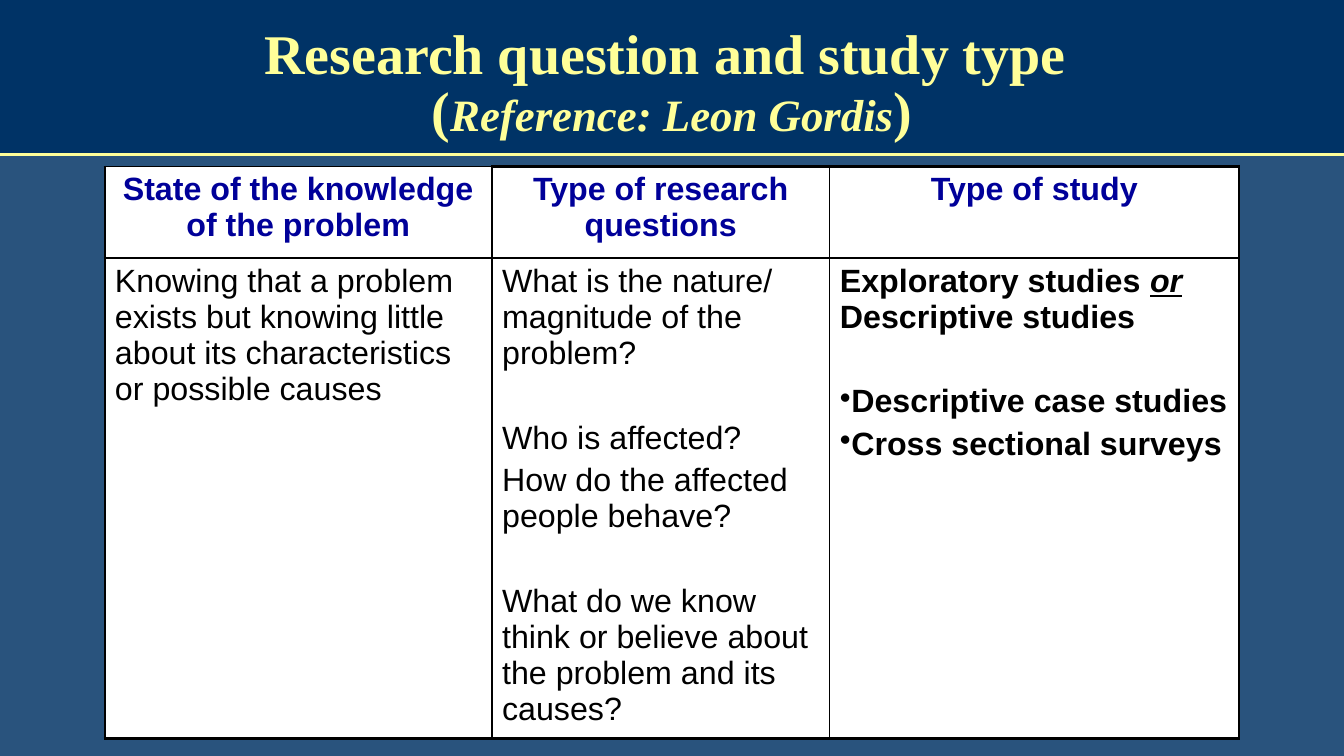
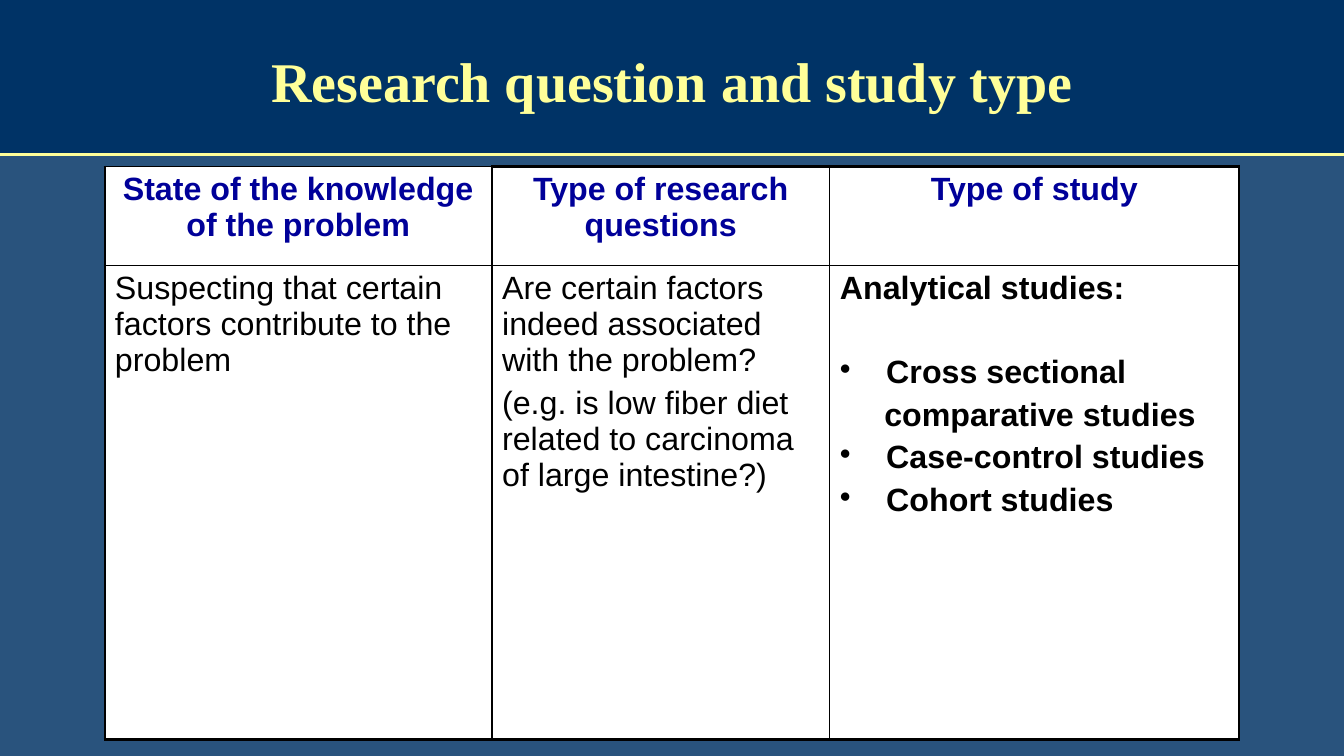
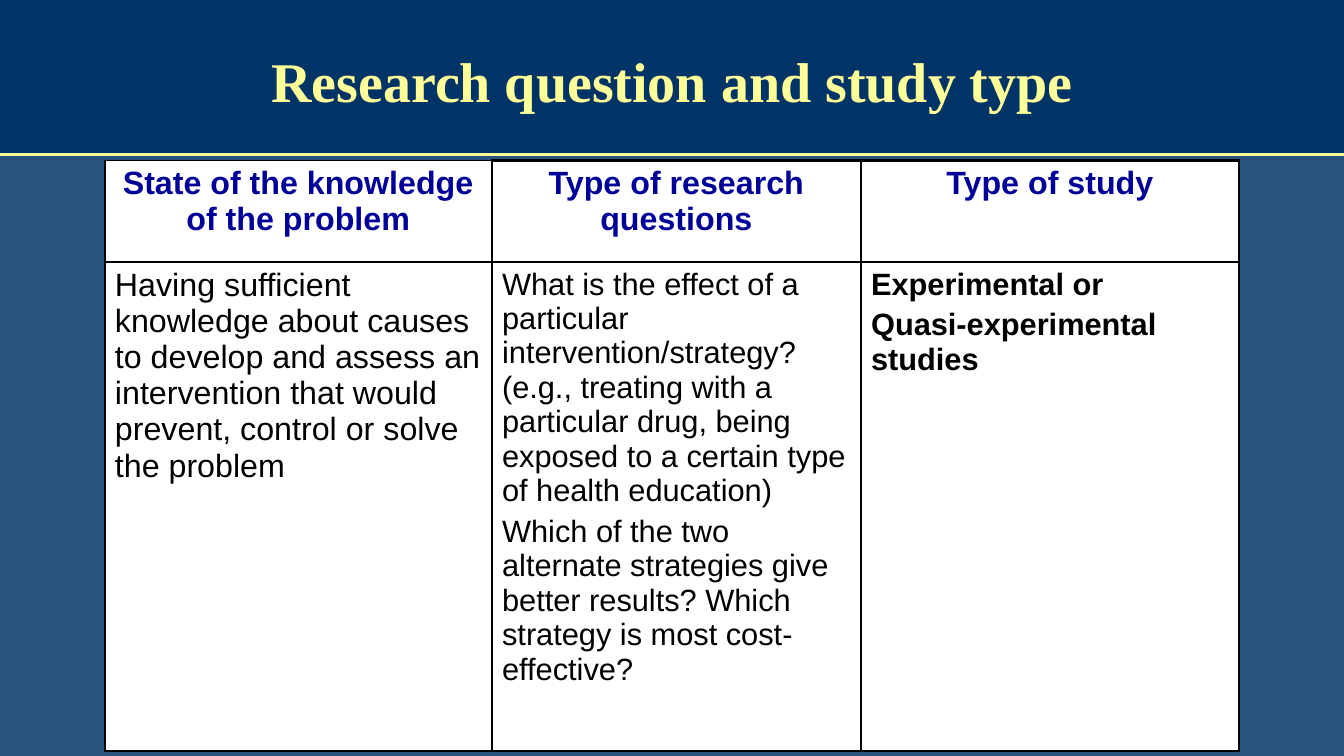
import dataclasses

import lxml.etree
import pptx
import pptx.dml.color
import pptx.enum.shapes
import pptx.enum.text
import pptx.oxml.ns
import pptx.util

Inches = pptx.util.Inches
Pt = pptx.util.Pt
ALIGN = pptx.enum.text.PP_ALIGN
qn = pptx.oxml.ns.qn


@dataclasses.dataclass(frozen=True)
class Theme:
    background: str = "29537D"
    band: str = "003366"
    accent: str = "FFFF99"
    heading: str = "000099"
    ink: str = "000000"
    paper: str = "FFFFFF"
    title_font: str = "Times New Roman"
    body_font: str = "Arial"
    title_size: int = 40
    reference_size: int = 32
    body_size: int = 23
    small_size: int = 22
    thick: float = 2.25
    thin: float = 1


@dataclasses.dataclass(frozen=True)
class Box:
    left: float
    top: float
    width: float
    height: float

    def emu(self):
        return [Inches(v) for v in (self.left, self.top, self.width, self.height)]


@dataclasses.dataclass(frozen=True)
class Para:
    text: str = ""
    bold: bool = False
    size: int = 0
    gap: bool = False
    bullet: bool = False
    indent: float = 0
    runs: tuple = ()


THEME = Theme()
BAND = Box(0, 0, 13.33, 1.53)
TITLE = Box(1, 0.17, 11.33, 1.36)
HEADINGS = (
    "State of the knowledge of the problem",
    "Type of research questions",
    "Type of study",
)
TITLE_TEXT = "Research question and study type"


def rgb(value):
    return pptx.dml.color.RGBColor.from_string(value)


def add_run(p, text, font, size, color, bold=False, italic=False, underline=False):
    r = p.add_run()
    r.text = text
    r.font.name = font
    r.font.size = Pt(size)
    r.font.color.rgb = rgb(color)
    r.font.bold = bold
    r.font.italic = italic
    r.font.underline = underline


def style_master(prs, s):
    master = prs.slide_master
    master.background.fill.solid()
    master.background.fill.fore_color.rgb = rgb(THEME.background)

    band = s.shapes.add_shape(pptx.enum.shapes.MSO_SHAPE.RECTANGLE, *BAND.emu())
    band.shadow.inherit = False
    band.fill.solid()
    band.fill.fore_color.rgb = rgb(THEME.band)
    band.line.fill.background()

    bottom = Inches(BAND.top + BAND.height)
    rule = s.shapes.add_connector(
        pptx.enum.shapes.MSO_CONNECTOR.STRAIGHT,
        Inches(BAND.left), bottom, Inches(BAND.left + BAND.width), bottom)
    rule.line.color.rgb = rgb(THEME.accent)
    rule.line.width = Pt(2)
    lxml.etree.SubElement(rule._element.spPr, qn("a:effectLst"))

    tree = master.shapes._spTree
    for i, shape in enumerate((band, rule)):
        tree.insert(2 + i, shape._element)


def fill_title(s, box, reference):
    title = s.shapes.title
    title.left, title.top, title.width, title.height = box.emu()
    tf = title.text_frame
    tf.word_wrap = True
    tf.auto_size = pptx.enum.text.MSO_AUTO_SIZE.NONE
    tf.vertical_anchor = pptx.enum.text.MSO_ANCHOR.MIDDLE
    p = tf.paragraphs[0]
    p.alignment = ALIGN.CENTER
    p.line_spacing = 0.85
    look = {"font": THEME.title_font, "color": THEME.accent, "bold": True}
    if not reference:
        add_run(p, TITLE_TEXT, size=THEME.title_size, **look)
        return
    add_run(p, TITLE_TEXT + " ", size=THEME.title_size, **look)
    p.add_line_break()
    add_run(p, "(", size=THEME.title_size, **look)
    add_run(p, reference, size=THEME.reference_size, italic=True, **look)
    add_run(p, ")", size=THEME.title_size, **look)


def set_indent(p, para):
    pPr = p._p.get_or_add_pPr()
    pPr.set("marL", str(Inches(para.indent)))
    pPr.set("indent", str(-Inches(para.indent) if para.bullet else 0))
    if para.bullet:
        lxml.etree.SubElement(pPr, qn("a:buChar")).set("char", "•")


def fill_cell(cell, paras, color, align):
    cell.fill.solid()
    cell.fill.fore_color.rgb = rgb(THEME.paper)
    tf = cell.text_frame
    for i, para in enumerate(paras):
        p = tf.paragraphs[0] if i == 0 else tf.add_paragraph()
        p.alignment = align
        size = para.size or THEME.body_size
        if i:
            p.space_before = Pt(size * (1.5 if para.gap else 0.2))
        set_indent(p, para)
        for text, style in para.runs or ((para.text, {}),):
            add_run(p, text, THEME.body_font, size, color, bold=para.bold, **style)


def set_borders(cell, widths):
    tcPr = cell._tc.get_or_add_tcPr()
    for i, (side, width) in enumerate(widths.items()):
        ln = lxml.etree.Element(qn("a:ln" + side), w=str(Pt(width)))
        fill = lxml.etree.SubElement(ln, qn("a:solidFill"))
        lxml.etree.SubElement(fill, qn("a:srgbClr")).set("val", THEME.ink)
        tcPr.insert(i, ln)


def add_study_table(s, left, top, cols, rows, body):
    box = Box(left, top, sum(cols), sum(rows))
    table = s.shapes.add_table(len(rows), len(cols), *box.emu()).table
    table.first_row = False
    table.horz_banding = False
    for column, width in zip(table.columns, cols):
        column.width = Inches(width)
    for row, height in zip(table.rows, rows):
        row.height = Inches(height)
    header = [[Para(text, bold=True)] for text in HEADINGS]
    looks = ((THEME.heading, ALIGN.CENTER), (THEME.ink, ALIGN.LEFT))
    for y, (content, look) in enumerate(zip((header, body), looks)):
        for x, paras in enumerate(content):
            cell = table.cell(y, x)
            fill_cell(cell, paras, *look)
            outer = {
                "L": x == 0,
                "R": x == len(cols) - 1,
                "T": y == 0 and x > 0,
                "B": y == len(rows) - 1,
            }
            set_borders(cell, {side: THEME.thick if edge else THEME.thin
                               for side, edge in outer.items()})


SLIDES = (
    {
        "reference": "Reference: Leon Gordis",
        "top": 1.65,
        "cols": (3.84, 3.35, 4.06),
        "rows": (0.91, 4.77),
        "body": (
            [Para("Knowing that a problem exists but knowing little about its "
                  "characteristics or possible causes")],
            [Para("What is the nature/ magnitude of the problem?"),
             Para("Who is affected?", gap=True),
             Para("How do the affected people behave?"),
             Para("What do we know think or believe about the problem and its causes?",
                  gap=True)],
            [Para(bold=True, runs=(("Exploratory studies ", {}),
                                   ("or", {"italic": True, "underline": True}),
                                   (" Descriptive studies", {}))),
             Para("Descriptive case studies", bold=True, gap=True, bullet=True, indent=0.11),
             Para("Cross sectional surveys", bold=True, bullet=True, indent=0.11)],
        ),
    },
    {
        "reference": "",
        "top": 1.65,
        "cols": (3.84, 3.35, 4.06),
        "rows": (0.98, 4.71),
        "body": (
            [Para("Suspecting that certain factors contribute to the problem")],
            [Para("Are certain factors indeed associated with the problem?"),
             Para("(e.g. is low fiber diet related to carcinoma of large intestine?)")],
            [Para("Analytical studies:", bold=True),
             Para("Cross sectional", bold=True, gap=True, bullet=True, indent=0.46),
             Para("comparative studies", bold=True, indent=0.44),
             Para("Case-control studies", bold=True, bullet=True, indent=0.46),
             Para("Cohort studies", bold=True, bullet=True, indent=0.46)],
        ),
    },
    {
        "reference": "",
        "top": 1.59,
        "cols": (3.84, 3.66, 3.75),
        "rows": (1.01, 4.85),
        "body": (
            [Para("Having sufficient knowledge about causes to develop and assess an "
                  "intervention that would prevent, control or solve the problem")],
            [Para("What is the effect of a particular intervention/strategy? (e.g., treating "
                  "with a particular drug, being exposed to a certain type of health "
                  "education)", size=THEME.small_size),
             Para("Which of the two alternate strategies give better results? Which "
                  "strategy is most cost-effective?", size=THEME.small_size)],
            [Para("Experimental or", bold=True, size=THEME.small_size),
             Para("Quasi-experimental studies", bold=True, size=THEME.small_size)],
        ),
    },
)


def main():
    prs = pptx.Presentation()
    prs.slide_width = Inches(13.33)
    prs.slide_height = Inches(7.5)
    for i, content in enumerate(SLIDES):
        s = prs.slides.add_slide(prs.slide_layouts[5])
        if i == 0:
            style_master(prs, s)
        fill_title(s, TITLE, content["reference"])
        add_study_table(s, 1.04, content["top"], content["cols"],
                        content["rows"], content["body"])
    prs.save("out.pptx")


if __name__ == "__main__":
    main()
